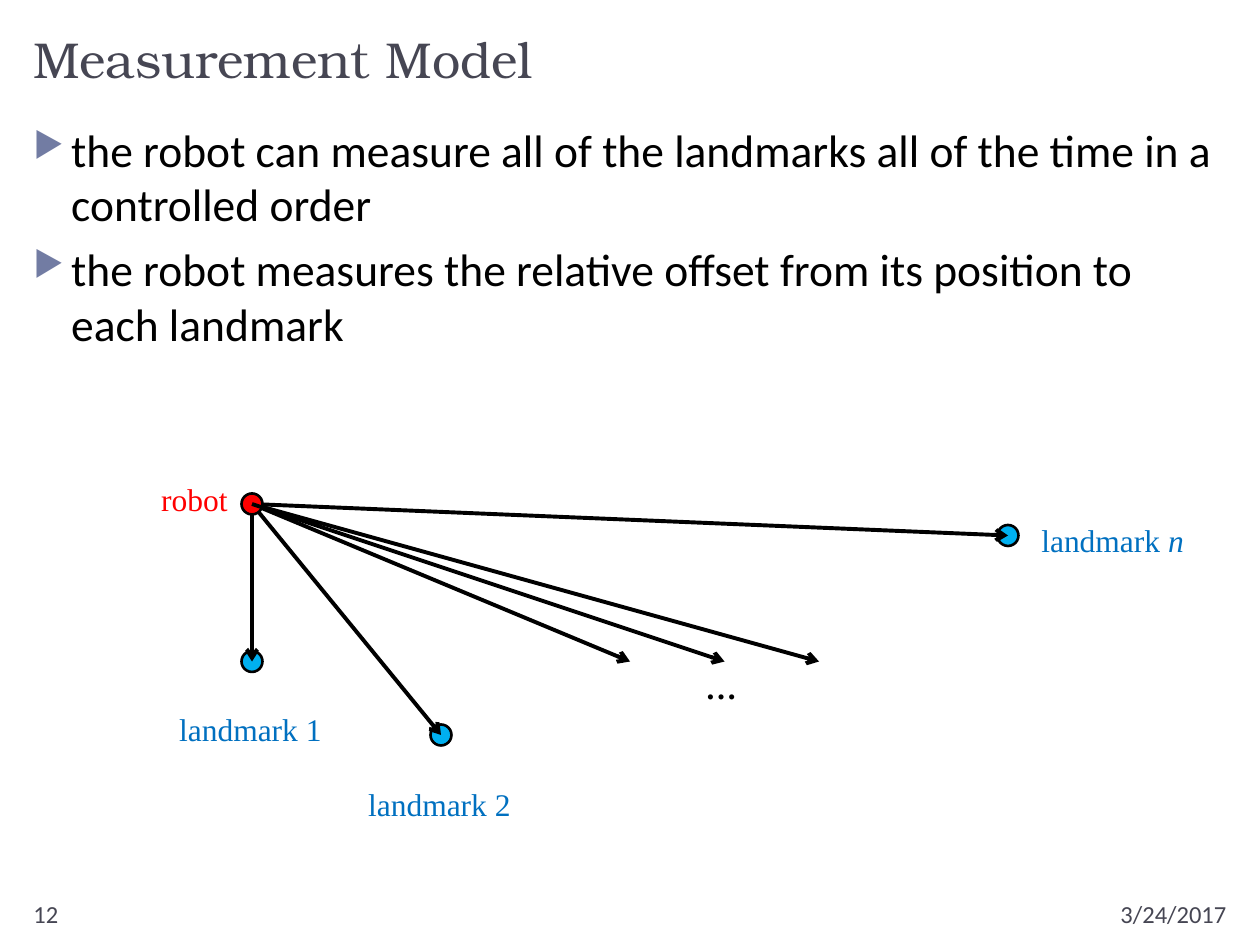
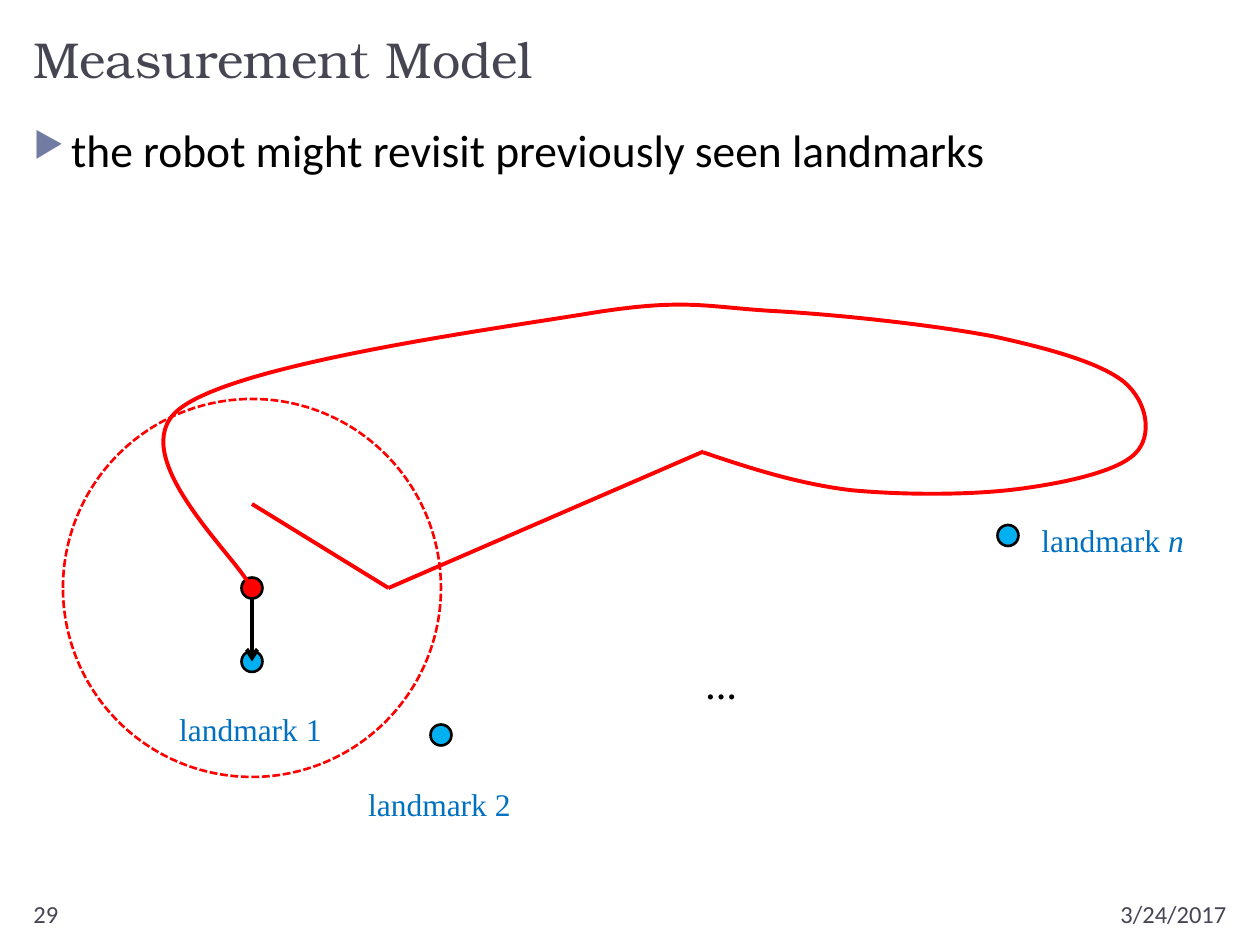
"""Build two slides on how a robot measures landmarks."""
from dataclasses import dataclass

from lxml import etree
from pptx import Presentation
from pptx.dml.color import RGBColor
from pptx.enum.dml import MSO_LINE
from pptx.enum.shapes import MSO_CONNECTOR, MSO_SHAPE
from pptx.enum.text import MSO_ANCHOR, MSO_AUTO_SIZE, PP_ALIGN
from pptx.oxml.ns import qn
from pptx.util import Pt

LEFT, RIGHT = PP_ALIGN.LEFT, PP_ALIGN.RIGHT
TOP, BOTTOM = MSO_ANCHOR.TOP, MSO_ANCHOR.BOTTOM
FIT_SHAPE = MSO_AUTO_SIZE.SHAPE_TO_FIT_TEXT
NO_FIT = MSO_AUTO_SIZE.NONE
OVAL, STRAIGHT = MSO_SHAPE.OVAL, MSO_CONNECTOR.STRAIGHT
SHORT_DASH = MSO_LINE.SQUARE_DOT


@dataclass(frozen=True)
class Theme:
    ink: str = "000000"
    slate: str = "464653"
    bullet: str = "727CA3"
    robot: str = "FF0000"
    landmark: str = "00B0F0"
    label: str = "0070C0"
    title_font: str = "TeX Gyre Bonum"
    body_font: str = "Calibri"
    label_font: str = "Times New Roman"
    bullet_font: str = "OpenSymbol"
    title_size: float = 28.8
    body_size: int = 26
    label_size: int = 18
    footer_size: int = 14
    path_width: float = 2.25
    outline_width: float = 1.5


theme = Theme()


def add_text(slide, text, frame, size=theme.label_size, font=theme.label_font,
             color=theme.label, align=LEFT, anchor=TOP, wrap=False, bold=False,
             bullets=False, italic_tail=""):
    box = slide.shapes.add_textbox(*map(Pt, frame))
    text_frame = box.text_frame
    text_frame.word_wrap = wrap
    text_frame.auto_size = NO_FIT if wrap else FIT_SHAPE
    text_frame.vertical_anchor = anchor
    for index, line in enumerate(text.split("\n")):
        para = text_frame.paragraphs[0] if index == 0 else text_frame.add_paragraph()
        para.alignment = align
        if bullets:
            para.space_before = Pt(6)
            properties = para._p.get_or_add_pPr()
            properties.set("marL", str(Pt(21.6)))
            properties.set("indent", str(-Pt(21.6)))
            bullet_color = etree.SubElement(properties, qn("a:buClr"))
            etree.SubElement(bullet_color, qn("a:srgbClr"), val=theme.bullet)
            etree.SubElement(properties, qn("a:buSzPct"), val="76000")
            etree.SubElement(properties, qn("a:buFont"), typeface=theme.bullet_font)
            etree.SubElement(properties, qn("a:buChar"), char="▶")
        for words, italic in ((line, False), (italic_tail, True)):
            if words:
                span = para.add_run()
                span.text = words
                span.font.name, span.font.size = font, Pt(size)
                span.font.bold, span.font.italic = bold, italic
                span.font.color.rgb = RGBColor.from_string(color)


path_start = (144, 288)
path_turns = [path_start, (222, 336), (402, 258)]
loop_points = [
    (401.8, 258.5),
    (429.1, 267.8), (456.5, 276.5), (486, 280.1),
    (516.2, 283), (555.1, 283), (582.5, 279.4),
    (609.8, 275.8), (638.6, 269.3), (648.7, 259.2),
    (658.8, 249.1), (655.9, 229.7), (642.2, 218.2),
    (628.6, 207.4), (600.5, 199.4), (567.4, 192.2),
    (533.5, 185.8), (481, 180), (442.8, 177.8),
    (403.9, 175.7), (392.4, 169.9), (335.5, 179.3),
    (278.6, 188.6), (133.9, 208.1), (102.2, 234),
    (69.8, 259.9), (136.1, 319), (143.3, 335.5),
]
landmarks = [(576, 306), (252, 420), (144, 378)]
landmark_dots = [(center, 12, theme.landmark) for center in landmarks]
revisit = (144, 336)

scenes = [
    {
        "number": "12",
        "body": "the robot can measure all of the landmarks all of the time in a controlled order\n"
                "the robot measures the relative offset from its position to each landmark",
        "layers": [
            (landmark_dots, [(path_start, end, theme.ink) for end in
                             (*reversed(landmarks[1:]), (360, 378), (468, 378), landmarks[0])]),
            ([(path_start, 12, theme.robot)], [(path_start, (414, 378), theme.ink)]),
        ],
        "robot_label": True,
        "curve": [],
    },
    {
        "number": "29",
        "body": "the robot might revisit previously seen landmarks",
        "layers": [
            ([(revisit, 216, None), *landmark_dots], [(revisit, landmarks[2], theme.ink)]),
            ([(revisit, 12, theme.robot)],
             [(start, end, theme.robot) for start, end in zip(path_turns, path_turns[1:])]),
        ],
        "robot_label": False,
        "curve": loop_points,
    },
]

deck = Presentation()
deck.slide_width, deck.slide_height = Pt(720), Pt(540)

for scene in scenes:
    slide = deck.slides.add_slide(deck.slide_layouts[6])
    add_text(slide, "Measurement Model", (12, 12, 696, 42), size=theme.title_size,
             font=theme.title_font, color=theme.slate, anchor=BOTTOM, wrap=True)
    for text, frame, align in (("3/24/2017", (576, 510, 132, 19.5), RIGHT),
                               (scene["number"], (12, 510, 156, 19.5), LEFT)):
        add_text(slide, text, frame, size=theme.footer_size, font=theme.body_font,
                 color=theme.slate, align=align, wrap=True)
    add_text(slide, scene["body"], (12, 66, 696, 432), size=theme.body_size,
             font=theme.body_font, color=theme.ink, wrap=True, bullets=True)

    for ovals, lines in scene["layers"]:
        for (x, y), diameter, fill in ovals:
            oval = slide.shapes.add_shape(OVAL, Pt(x - diameter / 2), Pt(y - diameter / 2),
                                          Pt(diameter), Pt(diameter))
            oval.shadow.inherit = False
            oval.line.width = Pt(theme.outline_width)
            oval.line.color.rgb = RGBColor.from_string(theme.ink if fill else theme.robot)
            if fill:
                oval.fill.solid()
                oval.fill.fore_color.rgb = RGBColor.from_string(fill)
            else:
                oval.fill.background()
                oval.line.dash_style = SHORT_DASH
        for start, end, color in lines:
            line = slide.shapes.add_connector(STRAIGHT, *map(Pt, (*start, *end)))
            line.line.width = Pt(theme.path_width)
            line.line.color.rgb = RGBColor.from_string(color)
            properties = line._element.spPr
            if color == theme.ink:
                etree.SubElement(properties.find(qn("a:ln")), qn("a:tailEnd"), type="arrow")
            etree.SubElement(properties, qn("a:effectLst"))

    if scene["robot_label"]:
        add_text(slide, "robot", (85, 270.7, 52.5, 29), color=theme.robot)
    for text, tail, left, top in (("landmark 1", "", 95.3, 402), ("landmark 2", "", 203.3, 445),
                                  ("landmark ", "n", 588, 294)):
        add_text(slide, text, (left, top, 96.5, 29), italic_tail=tail)
    add_text(slide, "…", (396, 378, 32.4, 29), color=theme.ink, bold=True)

    if scene["curve"]:
        points = [(Pt(x), Pt(y)) for x, y in scene["curve"]]
        builder = slide.shapes.build_freeform(*points[0])
        builder.add_line_segments(points[1:], close=False)
        loop = builder.convert_to_shape()
        loop.shadow.inherit = False
        loop.fill.background()
        loop.line.width = Pt(theme.path_width)
        loop.line.color.rgb = RGBColor.from_string(theme.robot)
        outline = next(loop._element.iter(qn("a:path")))
        segments = outline.findall(qn("a:lnTo"))
        for first in range(0, len(segments), 3):
            bend = etree.SubElement(outline, qn("a:cubicBezTo"))
            for segment in segments[first:first + 3]:
                bend.append(segment[0])
                outline.remove(segment)

deck.save("out.pptx")
